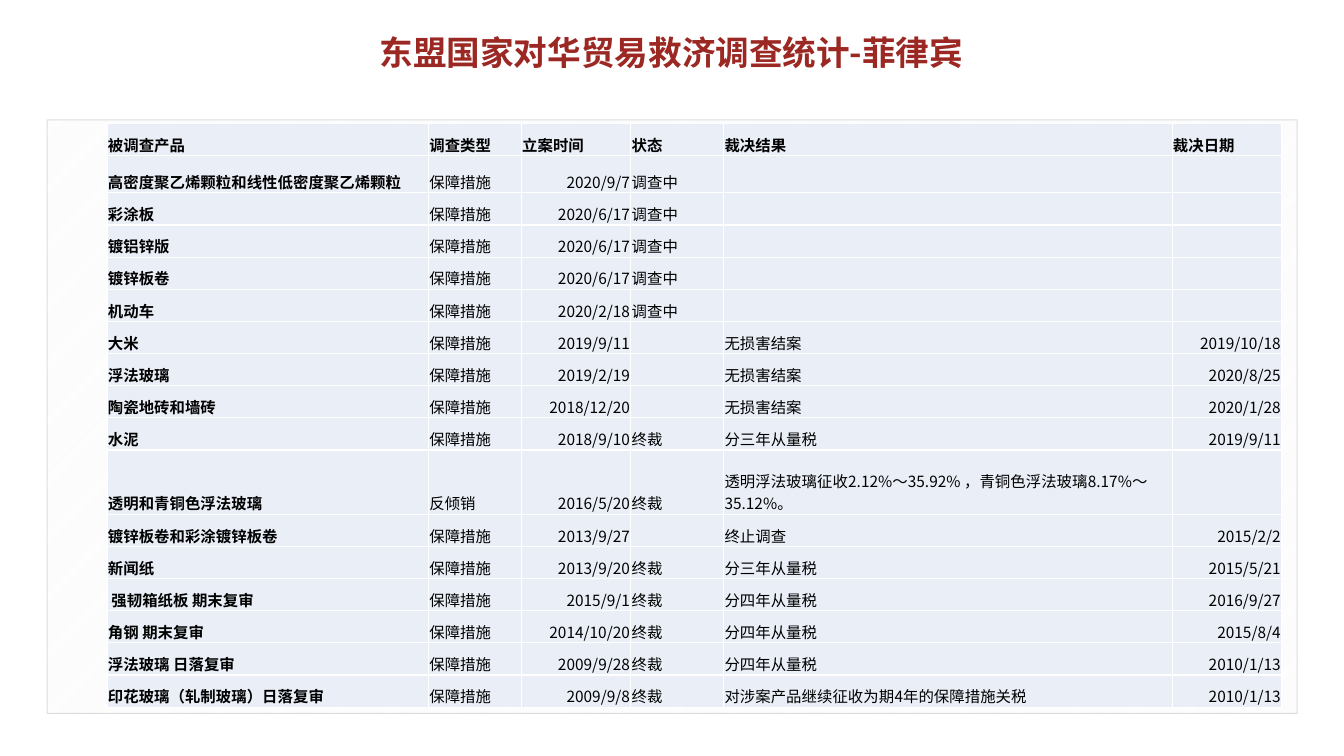
from lxml.etree import SubElement
from pptx import Presentation
from pptx.dml.color import RGBColor
from pptx.enum.dml import MSO_PATTERN
from pptx.enum.shapes import MSO_SHAPE
from pptx.enum.text import MSO_ANCHOR as Anchor, PP_ALIGN as Align
from pptx.oxml.ns import qn
from pptx.util import Cm, Pt

# Content
FONT = "Noto Sans CJK SC"
TITLE = "东盟国家对华贸易救济调查统计-菲律宾"
SAFEGUARD, PENDING, FINAL = "保障措施", "调查中", "终裁"
NO_INJURY, THREE_YEARS, FOUR_YEARS = "无损害结案", "分三年从量税", "分四年从量税"
GLASS_DUTY = "透明浮法玻璃征收2.12%～35.92% ，青铜色浮法玻璃8.17%～35.12%。"
CASES = [
    ("被调查产品", "调查类型", "立案时间", "状态", "裁决结果", "裁决日期"),
    ("高密度聚乙烯颗粒和线性低密度聚乙烯颗粒", SAFEGUARD, "2020/9/7", PENDING, "", ""),
    ("彩涂板", SAFEGUARD, "2020/6/17", PENDING, "", ""),
    ("镀铝锌版", SAFEGUARD, "2020/6/17", PENDING, "", ""),
    ("镀锌板卷", SAFEGUARD, "2020/6/17", PENDING, "", ""),
    ("机动车", SAFEGUARD, "2020/2/18", PENDING, "", ""),
    ("大米", SAFEGUARD, "2019/9/11", "", NO_INJURY, "2019/10/18"),
    ("浮法玻璃", SAFEGUARD, "2019/2/19", "", NO_INJURY, "2020/8/25"),
    ("陶瓷地砖和墙砖", SAFEGUARD, "2018/12/20", "", NO_INJURY, "2020/1/28"),
    ("水泥", SAFEGUARD, "2018/9/10", FINAL, THREE_YEARS, "2019/9/11"),
    ("透明和青铜色浮法玻璃", "反倾销", "2016/5/20", FINAL, GLASS_DUTY, ""),
    ("镀锌板卷和彩涂镀锌板卷", SAFEGUARD, "2013/9/27", "", "终止调查", "2015/2/2"),
    ("新闻纸", SAFEGUARD, "2013/9/20", FINAL, THREE_YEARS, "2015/5/21"),
    (" 强韧箱纸板 期末复审", SAFEGUARD, "2015/9/1", FINAL, FOUR_YEARS, "2016/9/27"),
    ("角钢 期末复审", SAFEGUARD, "2014/10/20", FINAL, FOUR_YEARS, "2015/8/4"),
    ("浮法玻璃 日落复审", SAFEGUARD, "2009/9/28", FINAL, FOUR_YEARS, "2010/1/13"),
    ("印花玻璃（轧制玻璃）日落复审", SAFEGUARD, "2009/9/8", FINAL,
     "对涉案产品继续征收为期4年的保障措施关税", "2010/1/13"),
]
COLUMN_WIDTHS = [8.1, 2.34, 2.76, 2.34, 11.3, 2.76]
DATE_COLUMNS = (2, 5)
ROW_HEIGHT = 0.81
SPECIAL_HEIGHTS = {1: 0.94, 10: 1.62}


def color(value):
    return RGBColor.from_string(value)


def style(paragraph, size, text_color, bold, align):
    paragraph.alignment = align
    font = paragraph.font
    font.name, font.size, font.bold = FONT, Pt(size), bold
    font.color.rgb = color(text_color)
    # East Asian typeface, and the size of an empty paragraph
    defaults = paragraph._p.pPr.find(qn("a:defRPr"))
    SubElement(defaults, qn("a:ea")).set("typeface", FONT)
    if not paragraph.text:
        SubElement(paragraph._p, qn("a:endParaRPr")).set("sz", str(size * 100))


presentation = Presentation()
presentation.slide_width, presentation.slide_height = Cm(33.87), Cm(19.05)
slide = presentation.slides.add_slide(presentation.slide_layouts[5])

# Title
title = slide.shapes.title
title.left, title.top, title.width, title.height = Cm(5.77), Cm(0.61), Cm(22.3), Cm(1.52)
title.text_frame.text = TITLE
title.text_frame.vertical_anchor = Anchor.MIDDLE
title.text_frame.paragraphs[0].line_spacing = 0.9
style(title.text_frame.paragraphs[0], 24, "9B2823", True, Align.CENTER)

# Hatched panel with a faint outline
panel = slide.shapes.add_shape(MSO_SHAPE.RECTANGLE, Cm(1.19), Cm(3.02), Cm(31.5), Cm(14.96))
panel.shadow.inherit = False
panel.fill.patterned()
panel.fill.pattern = MSO_PATTERN.LIGHT_UPWARD_DIAGONAL
panel.fill.fore_color.rgb = color("F2F2F2")
panel.fill.back_color.rgb = color("FFFFFF")
panel.line.color.rgb = color("595959")
panel.line.width = Pt(0.75)
outline_color = panel.line._ln.find(".//" + qn("a:srgbClr"))
SubElement(outline_color, qn("a:alpha")).set("val", "20000")

# Table of cases
row_heights = [SPECIAL_HEIGHTS.get(row, ROW_HEIGHT) for row in range(len(CASES))]
table = slide.shapes.add_table(
    len(CASES), len(COLUMN_WIDTHS), Cm(2.7), Cm(3.11),
    Cm(sum(COLUMN_WIDTHS)), Cm(sum(row_heights))).table
table.first_row = table.horz_banding = False
for column, width in zip(table.columns, COLUMN_WIDTHS):
    column.width = Cm(width)
for row, height in zip(table.rows, row_heights):
    row.height = Cm(height)

for row, case in enumerate(CASES):
    for column, text in enumerate(case):
        cell = table.cell(row, column)
        cell.text = text
        cell.vertical_anchor = Anchor.BOTTOM
        cell.margin_left = cell.margin_right = cell.margin_top = Cm(0.02)
        cell.margin_bottom = 0
        cell.fill.solid()
        cell.fill.fore_color.rgb = color("EAEFF7")
        is_date = row > 0 and column in DATE_COLUMNS
        style(cell.text_frame.paragraphs[0], 11, "000000", row == 0 or column == 0,
              Align.RIGHT if is_date else Align.LEFT)

presentation.save("out.pptx")
